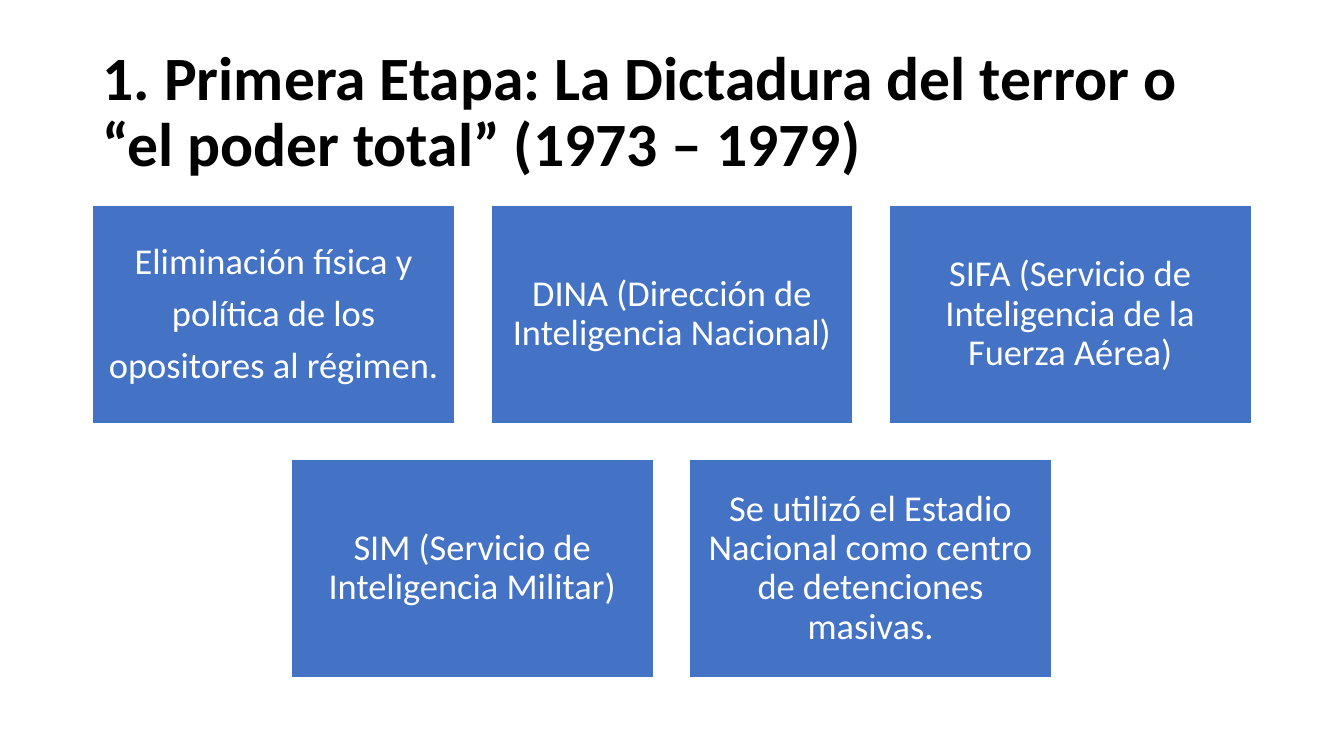
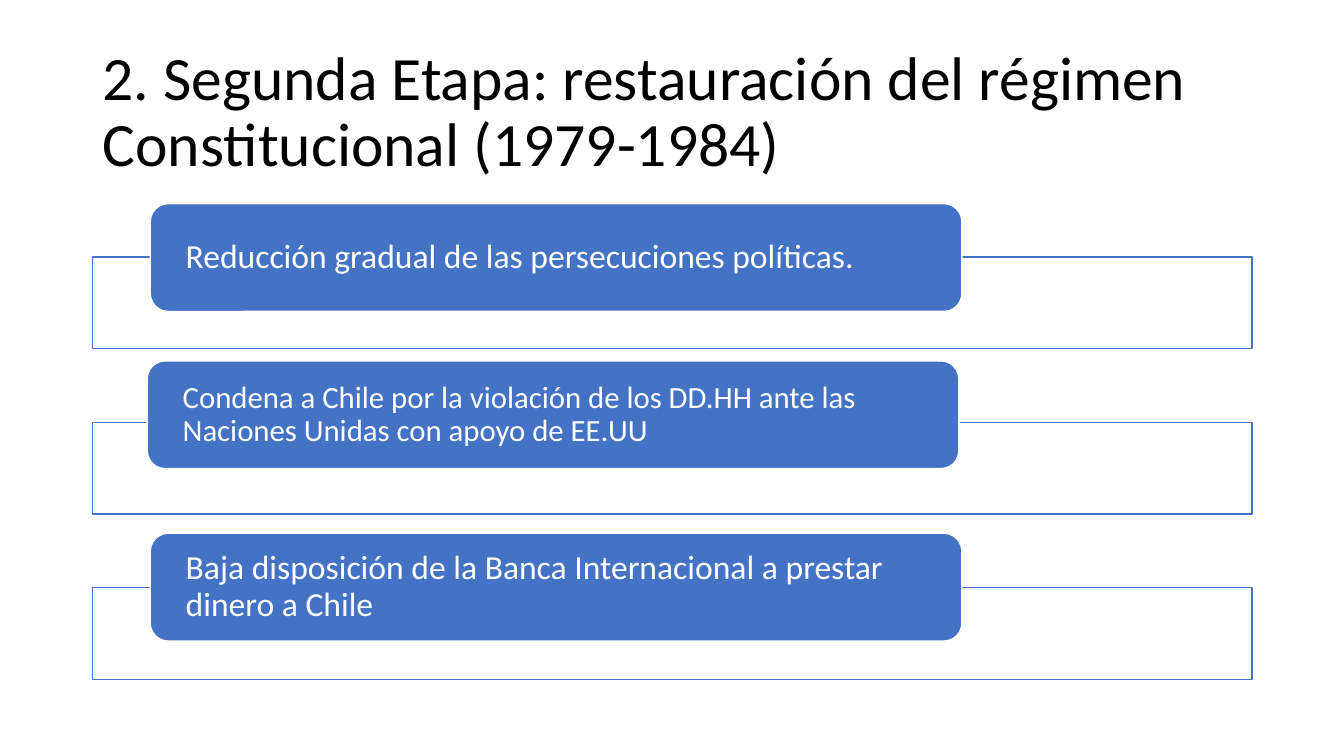
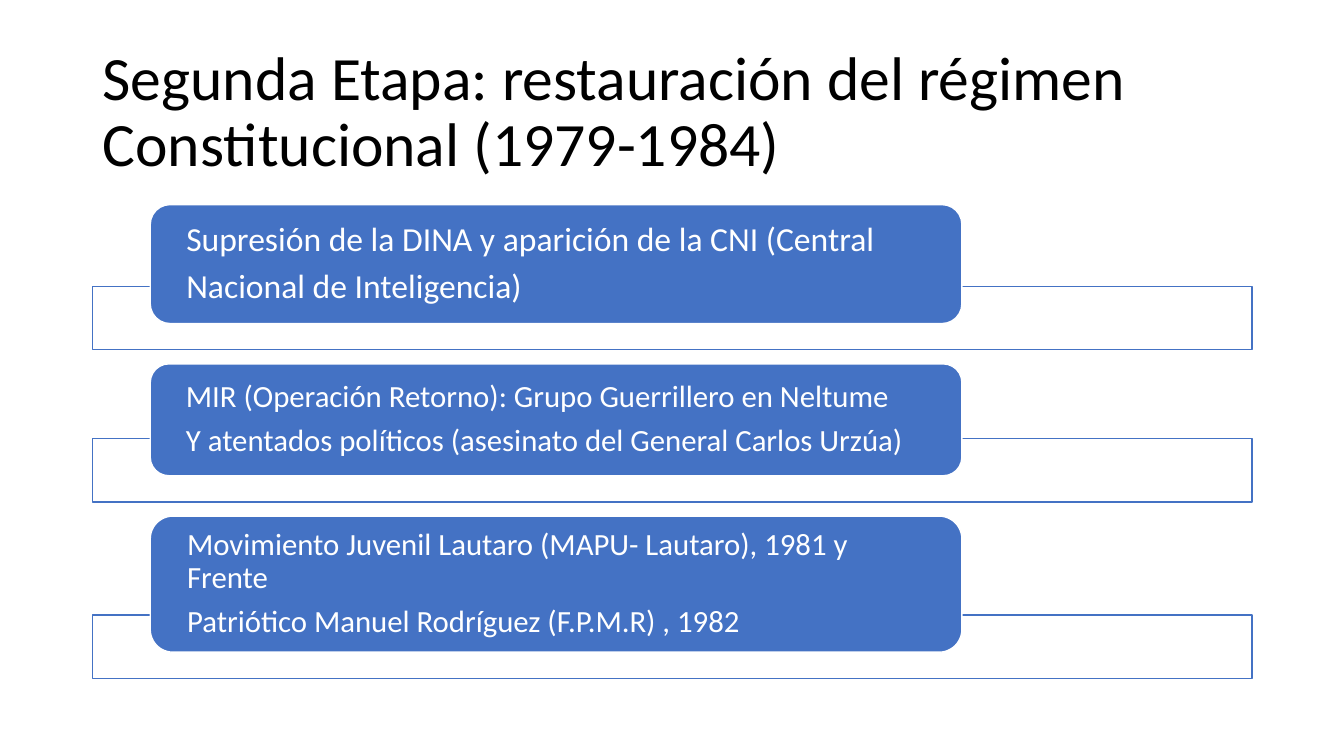
import lxml.etree
import pptx
import pptx.dml.color
import pptx.enum.shapes
import pptx.enum.text
import pptx.oxml.ns
import pptx.util

RECTANGLE = pptx.enum.shapes.MSO_SHAPE.RECTANGLE
ROUNDED = pptx.enum.shapes.MSO_SHAPE.ROUNDED_RECTANGLE
LEFT = pptx.enum.text.PP_ALIGN.LEFT
CENTER = pptx.enum.text.PP_ALIGN.CENTER


def px(length):
    """One px is a hundredth of an inch."""
    return pptx.util.Emu(int(length * 9144))


def color(value):
    return pptx.dml.color.RGBColor.from_string(value)


class Deck:
    FONT = "Calibri"
    BLUE, WHITE, BLACK = "4472C4", "FFFFFF", "000000"
    WIDTH, HEIGHT = 1333, 750
    MARGIN, CONTENT_WIDTH = 92, 1150

    def __init__(self):
        self.presentation = pptx.Presentation()
        self.presentation.slide_width = px(self.WIDTH)
        self.presentation.slide_height = px(self.HEIGHT)
        self.slide = None

    def new_slide(self, title, bold=False):
        layout = self.presentation.slide_layouts[6]
        self.slide = self.presentation.slides.add_slide(layout)
        box = self.slide.shapes.add_textbox(
            px(self.MARGIN), px(40), px(self.CONTENT_WIDTH), px(145))
        self.set_text(box, [title], 44, self.BLACK, LEFT, (10, 5), bold)

    def set_text(self, shape, lines, size, ink, alignment, insets, bold=False):
        """Fill a shape with one paragraph for each line."""
        frame = shape.text_frame
        frame.word_wrap = True
        frame.vertical_anchor = pptx.enum.text.MSO_ANCHOR.MIDDLE
        frame.margin_left = frame.margin_right = px(insets[0])
        frame.margin_top = frame.margin_bottom = px(insets[1])
        for index, line in enumerate(lines):
            paragraph = frame.add_paragraph() if index else frame.paragraphs[0]
            paragraph.alignment = alignment
            paragraph.line_spacing = 0.9
            if len(lines) > 1:
                paragraph.space_after = pptx.util.Pt(round(size * 0.35))
            run = paragraph.add_run()
            run.text = line
            run.font.name = self.FONT
            run.font.size = pptx.util.Pt(size)
            run.font.bold = bold
            run.font.color.rgb = color(ink)

    def box(self, kind, left, top, width, height, fill, line):
        shape = self.slide.shapes.add_shape(
            kind, px(left), px(top), px(width), px(height))
        shape.shadow.inherit = False
        shape.fill.solid()
        shape.fill.fore_color.rgb = color(fill)
        shape.line.color.rgb = color(line)
        shape.line.width = pptx.util.Pt(1)
        return shape

    def card_row(self, top, cards):
        """A centred row of equal cards."""
        width, height, gap = 359, 216, 36
        row_width = len(cards) * (width + gap) - gap
        left = (self.WIDTH - row_width) // 2
        for index, lines in enumerate(cards):
            card = self.box(RECTANGLE, left + index * (width + gap), top,
                            width, height, self.BLUE, self.WHITE)
            self.set_text(card, lines, 26, self.WHITE, CENTER, (11, 11))

    def banner(self, frame_top, frame_height, left, top, height, size, lines):
        """A rounded label over a wide outlined frame."""
        frame = self.box(RECTANGLE, self.MARGIN, frame_top, self.CONTENT_WIDTH,
                         frame_height, self.WHITE, self.BLUE)
        fill_color = frame.element.spPr.find(".//" + pptx.oxml.ns.qn("a:srgbClr"))
        lxml.etree.SubElement(
            fill_color, pptx.oxml.ns.qn("a:alpha"), val="90000")
        label = self.box(ROUNDED, left, top, 805, height, self.BLUE, self.WHITE)
        self.set_text(label, lines, size, self.WHITE, LEFT, (30, 0))


def main():
    deck = Deck()

    # First stage: cards
    deck.new_slide("1. Primera Etapa: La Dictadura del terror o "
                   "“el poder total” (1973 – 1979)", bold=True)
    deck.card_row(204, [
        ["Eliminación física y", "política de los", "opositores al régimen."],
        ["DINA (Dirección de Inteligencia Nacional)"],
        ["SIFA (Servicio de Inteligencia de la Fuerza Aérea)"],
    ])
    deck.card_row(456, [
        ["SIM (Servicio de Inteligencia Militar)"],
        ["Se utilizó el Estadio Nacional como centro de detenciones masivas."],
    ])

    # Second stage: evenly spaced frames, labels placed one by one
    second_stage = "Segunda Etapa: restauración del régimen Constitucional (1979-1984)"
    deck.new_slide("2. " + second_stage)
    labels = [
        (149, 202, 24, "Reducción gradual de las persecuciones políticas."),
        (146, 358, 22, "Condena a Chile por la violación de los DD.HH ante las "
                       "Naciones Unidas con apoyo de EE.UU"),
        (149, 529, 24, "Baja disposición de la Banca Internacional a prestar "
                       "dinero a Chile"),
    ]
    for index, (left, top, size, text) in enumerate(labels):
        deck.banner(255 + index * 164, 91, left, top, 107, size, [text])

    # Second stage, continued: banners stacked by label height
    deck.new_slide(second_stage)
    labels = [
        (118, 24, ["Supresión de la DINA y aparición de la CNI (Central",
                   "Nacional de Inteligencia)"]),
        (111, 22, ["MIR (Operación Retorno): Grupo Guerrillero en Neltume",
                   "Y atentados políticos (asesinato del General Carlos Urzúa)"]),
        (135, 22, ["Movimiento Juvenil Lautaro (MAPU- Lautaro), 1981 y Frente",
                   "Patriótico Manuel Rodríguez (F.P.M.R) , 1982"]),
    ]
    top, overlap, frame_height, gap = 203, 37, 63, 14
    for height, size, lines in labels:
        frame_top = top + height - overlap
        deck.banner(frame_top, frame_height, 149, top, height, size, lines)
        top = frame_top + frame_height + gap

    deck.presentation.save("out.pptx")


if __name__ == "__main__":
    main()
